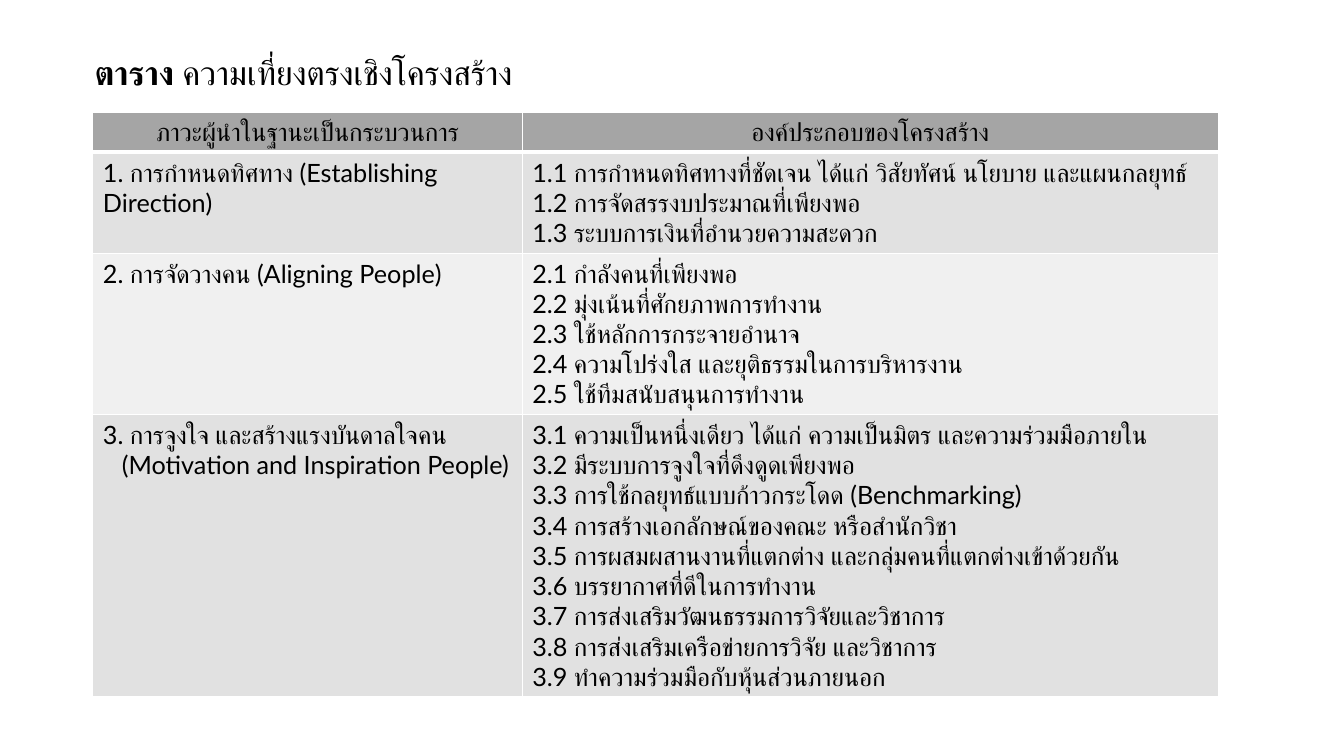
from lxml.etree import SubElement
from pptx import Presentation
from pptx.dml.color import RGBColor
from pptx.enum.text import MSO_ANCHOR, PP_ALIGN
from pptx.oxml.ns import qn
from pptx.util import Cm, Pt

COLORS = {"text": "000000", "border": "FFFFFF", "header": "A5A5A5",
          "odd": "E1E1E1", "even": "F0F0F0"}
FONT = "Lato"
LINE_HEIGHT, CELL_PADDING, HEADER_HEIGHT = 0.76, 0.25, 0.91
CONTINUATION_INDENT = Cm(0.48)

HEADINGS = ["ภาวะผู้นำในฐานะเป็นกระบวนการ", "องค์ประกอบของโครงสร้าง"]
PROCESSES = [
    (["1. การกำหนดทิศทาง (Establishing Direction)"],
     ["1.1 การกำหนดทิศทางที่ชัดเจน ได้แก่ วิสัยทัศน์ นโยบาย และแผนกลยุทธ์",
      "1.2 การจัดสรรงบประมาณที่เพียงพอ",
      "1.3 ระบบการเงินที่อำนวยความสะดวก"]),
    (["2. การจัดวางคน (Aligning People)"],
     ["2.1 กำลังคนที่เพียงพอ",
      "2.2 มุ่งเน้นที่ศักยภาพการทำงาน",
      "2.3 ใช้หลักการกระจายอำนาจ",
      "2.4 ความโปร่งใส และยุติธรรมในการบริหารงาน",
      "2.5 ใช้ทีมสนับสนุนการทำงาน"]),
    (["3. การจูงใจ และสร้างแรงบันดาลใจคน",
      "(Motivation and Inspiration People)"],
     ["3.1 ความเป็นหนึ่งเดียว ได้แก่ ความเป็นมิตร และความร่วมมือภายใน",
      "3.2 มีระบบการจูงใจที่ดึงดูดเพียงพอ",
      "3.3 การใช้กลยุทธ์แบบก้าวกระโดด (Benchmarking)",
      "3.4 การสร้างเอกลักษณ์ของคณะ หรือสำนักวิชา",
      "3.5 การผสมผสานงานที่แตกต่าง และกลุ่มคนที่แตกต่างเข้าด้วยกัน",
      "3.6 บรรยากาศที่ดีในการทำงาน",
      "3.7 การส่งเสริมวัฒนธรรมการวิจัยและวิชาการ",
      "3.8 การส่งเสริมเครือข่ายการวิจัย และวิชาการ",
      "3.9 ทำความร่วมมือกับหุ้นส่วนภายนอก"]),
]


def add_words(paragraph, words, size, bold=False):
    run = paragraph.add_run()
    run.text = words
    for attribute, value in {"name": FONT, "size": Pt(size), "bold": bold}.items():
        setattr(run.font, attribute, value)
    run.font.color.rgb = RGBColor.from_string(COLORS["text"])
    # Thai letters take the complex-script font
    SubElement(run.font._element, qn("a:cs"), typeface=FONT)


def set_borders(cell, widths):
    """Draw the sides L, R, T and B with the given widths in points."""
    properties = cell._tc.get_or_add_tcPr()
    for side, width in widths.items():
        border = SubElement(properties, qn(f"a:ln{side}"), w=str(Pt(width)))
        fill = SubElement(border, qn("a:solidFill"))
        SubElement(fill, qn("a:srgbClr"), val=COLORS["border"])


def fill_cell(cell, lines, color, widths, align):
    set_borders(cell, widths)
    cell.fill.solid()
    cell.fill.fore_color.rgb = RGBColor.from_string(COLORS[color])
    frame = cell.text_frame
    for index, line in enumerate(lines):
        paragraph = frame.add_paragraph() if index else frame.paragraphs[0]
        paragraph.alignment = align
        if line.startswith("("):
            paragraph._p.get_or_add_pPr().set("marL", str(CONTINUATION_INDENT))
        add_words(paragraph, line, 18)


def add_title(slide, box):
    title = slide.shapes.title
    for attribute, value in zip(("left", "top", "width", "height"), box):
        setattr(title, attribute, Cm(value))
    frame = title.text_frame
    frame.vertical_anchor = MSO_ANCHOR.MIDDLE
    heading = frame.paragraphs[0]
    heading.alignment = PP_ALIGN.LEFT
    heading.line_spacing = 0.9
    add_words(heading, "ตาราง ", 24, bold=True)
    add_words(heading, "ความเที่ยงตรงเชิงโครงสร้าง", 24)


def add_validity_table(slide, left, top, column_widths):
    heights = [HEADER_HEIGHT] + [LINE_HEIGHT * len(components) + CELL_PADDING
                                 for _, components in PROCESSES]
    table = slide.shapes.add_table(
        len(heights), len(column_widths), Cm(left), Cm(top),
        Cm(sum(column_widths)), Cm(sum(heights))).table
    for column, width in zip(table.columns, column_widths):
        column.width = Cm(width)
    for row, height in zip(table.rows, heights):
        row.height = Cm(height)

    for column, heading in enumerate(HEADINGS):
        fill_cell(table.cell(0, column), [heading], "header",
                  {"L": 1, "R": 1, "T": 1, "B": 3}, PP_ALIGN.CENTER)
    for row, process in enumerate(PROCESSES, start=1):
        widths = {"L": 1, "R": 1, "T": 3 if row == 1 else 1, "B": 1}
        for column, lines in enumerate(process):
            fill_cell(table.cell(row, column), lines,
                      "odd" if row % 2 else "even", widths, PP_ALIGN.LEFT)


def main():
    presentation = Presentation()
    presentation.slide_width = Cm(33.87)
    presentation.slide_height = Cm(19.05)
    slide = presentation.slides.add_slide(presentation.slide_layouts[5])
    add_title(slide, (2.13, 0.97, 29.21, 1.83))
    add_validity_table(slide, 2.34, 2.82, (10.82, 17.55))
    presentation.save("out.pptx")


if __name__ == "__main__":
    main()
